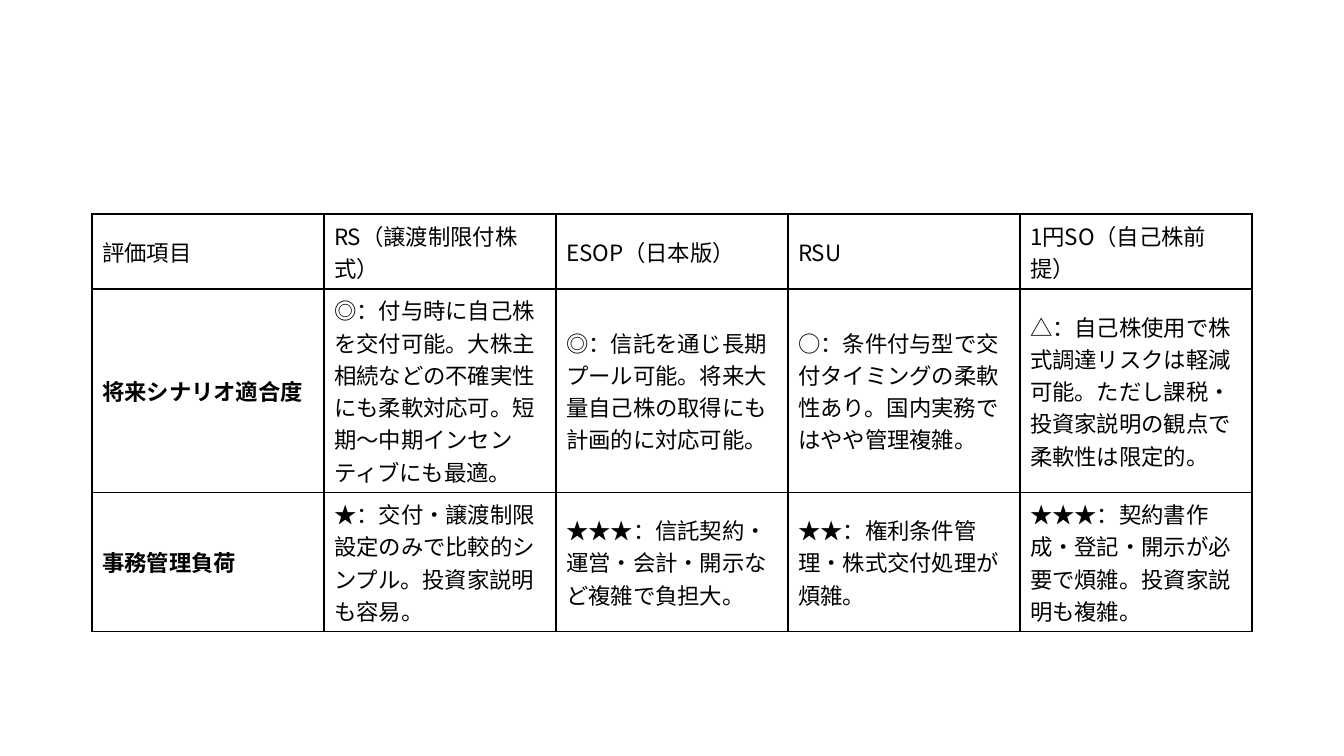
from lxml import etree
from pptx import Presentation
from pptx.dml.color import RGBColor
from pptx.enum.text import MSO_ANCHOR
from pptx.oxml.ns import qn
from pptx.util import Emu, Pt

HEADER = ["評価項目", "RS（譲渡制限付株式）", "ESOP（日本版）", "RSU", "1円SO（自己株前提）"]
CRITERIA = [
    ["将来シナリオ適合度",
     "◎：付与時に自己株を交付可能。大株主相続などの不確実性にも柔軟対応可。短期〜中期インセンティブにも最適。",
     "◎：信託を通じ長期プール可能。将来大量自己株の取得にも計画的に対応可能。",
     "○：条件付与型で交付タイミングの柔軟性あり。国内実務ではやや管理複雑。",
     "△：自己株使用で株式調達リスクは軽減可能。ただし課税・投資家説明の観点で柔軟性は限定的。"],
    ["事務管理負荷",
     "★：交付・譲渡制限設定のみで比較的シンプル。投資家説明も容易。",
     "★★★：信託契約・運営・会計・開示など複雑で負担大。",
     "★★：権利条件管理・株式交付処理が煩雑。",
     "★★★：契約書作成・登記・開示が必要で煩雑。投資家説明も複雑。"],
]
COLORS = {"text": "000000", "border": "000000"}
FONT = "Noto Sans CJK JP"
TEXT_SIZE = Pt(16)
BORDER_WIDTH = Pt(1)

SLIDE_W, SLIDE_H = 1344, 756
TABLE_LEFT, TABLE_TOP, TABLE_W = 92, 214, 1160
ROW_HEIGHTS = [75, 203, 139]
MIDDLE = MSO_ANCHOR.MIDDLE


def px(n):
    return Emu(round(n * 914400 * 10 / 1008))


def add_borders(cell):
    """Draw all four cell edges, placed before any fill as the schema asks."""
    props = cell._tc.get_or_add_tcPr()
    for i, edge in enumerate(("a:lnL", "a:lnR", "a:lnT", "a:lnB")):
        line = etree.Element(qn(edge), w=str(BORDER_WIDTH))
        fill = etree.SubElement(line, qn("a:solidFill"))
        etree.SubElement(fill, qn("a:srgbClr"), val=COLORS["border"])
        props.insert(i, line)


def write_cell(cell, text, bold):
    cell.fill.background()
    add_borders(cell)
    cell.vertical_anchor = MIDDLE
    cell.text = text
    paragraph = cell.text_frame.paragraphs[0]
    # Run-level properties are what table cells reliably honour.
    run = paragraph.runs[0]
    for font in (paragraph.font, run.font):
        font.size = TEXT_SIZE
        font.bold = bold
        font.color.rgb = RGBColor.from_string(COLORS["text"])
        font.name = FONT
    etree.SubElement(run._r.get_or_add_rPr(), qn("a:ea"), typeface=FONT)


def main():
    prs = Presentation()
    prs.slide_width, prs.slide_height = px(SLIDE_W), px(SLIDE_H)
    slide = prs.slides.add_slide(prs.slide_layouts[6])

    rows = [HEADER, *CRITERIA]
    table = slide.shapes.add_table(
        len(rows), len(HEADER), px(TABLE_LEFT), px(TABLE_TOP),
        px(TABLE_W), px(sum(ROW_HEIGHTS))).table
    table.first_row = table.horz_banding = False

    for column in table.columns:
        column.width = px(TABLE_W / len(HEADER))
    for r, (texts, height) in enumerate(zip(rows, ROW_HEIGHTS)):
        table.rows[r].height = px(height)
        for c, text in enumerate(texts):
            write_cell(table.cell(r, c), text, bold=r > 0 and c == 0)

    prs.save("out.pptx")


if __name__ == "__main__":
    main()
